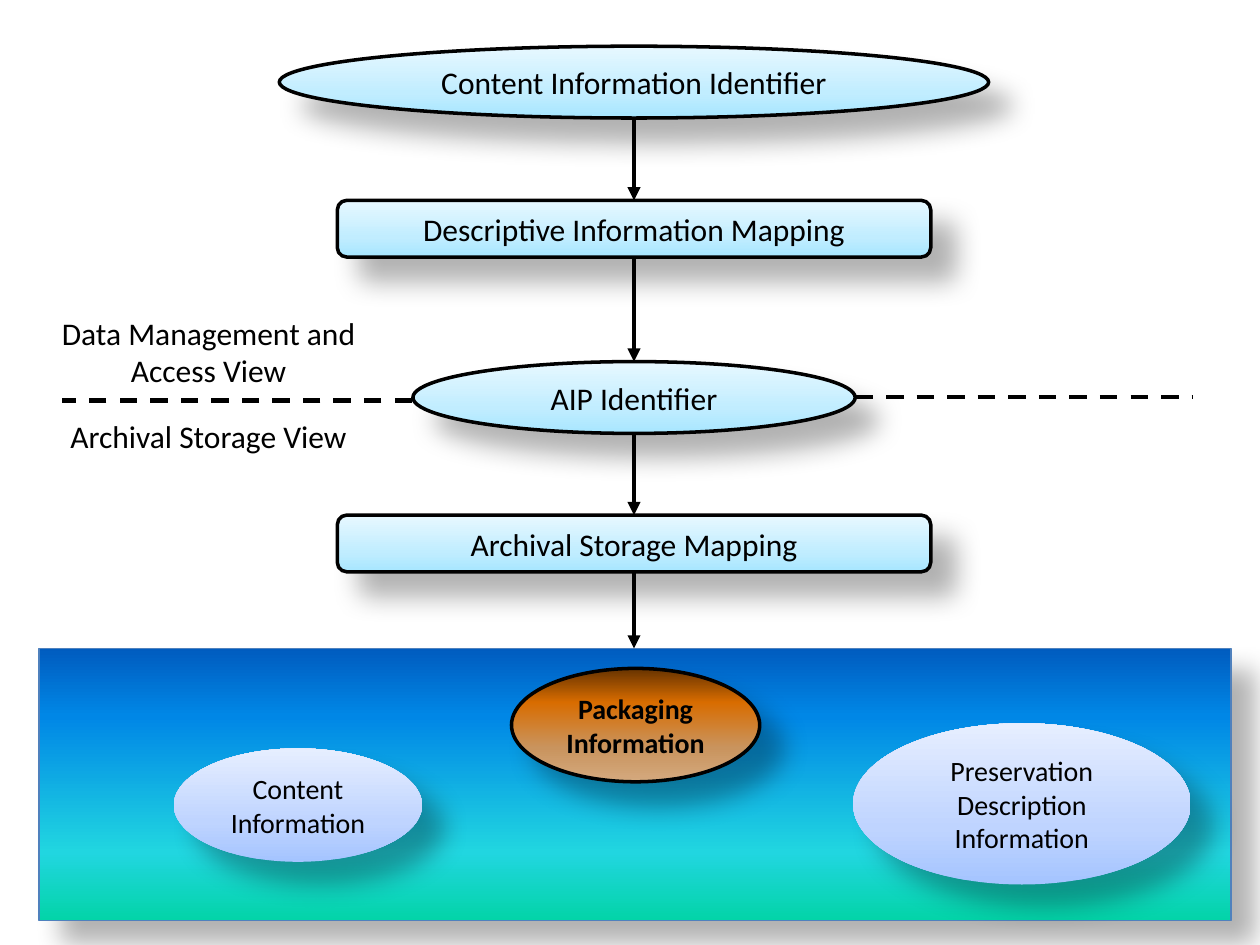
from itertools import pairwise

from lxml.etree import SubElement
from pptx import Presentation
from pptx.dml.color import RGBColor
from pptx.enum.dml import MSO_LINE
from pptx.enum.shapes import MSO_CONNECTOR, MSO_SHAPE
from pptx.enum.text import MSO_ANCHOR, PP_ALIGN
from pptx.oxml.ns import qn
from pptx.util import Inches, Pt

# Grid of 100 columns by 75 rows
COLS, ROWS = 100, 75
CELL = Inches(0.1)
AXIS = 50.32  # column on which the flow is centred

# Gradients: (position in percent, colour), from bottom to top
ICE = [(0, "A7E6FF"), (35, "C1EDFF"), (100, "E7F8FF")]
OCEAN = [(0, "03D4A8"), (25, "21D6E0"), (75, "0087E6"), (100, "005CBF")]
COPPER = [(0, "D4A97E"), (30, "C9945E"), (70, "D86C00"), (100, "663300")]
LILAC = [(0, "A4C4FF"), (35, "BFD4FF"), (100, "E6EEFF")]

# Flow steps: text, shape, top, width, height
FLOW = [
    ("Content Information Identifier", MSO_SHAPE.OVAL, 3.67, 56.3, 5.7),
    ("Descriptive Information Mapping", MSO_SHAPE.ROUNDED_RECTANGLE, 15.9, 47.1, 4.5),
    ("AIP Identifier", MSO_SHAPE.OVAL, 28.7, 35.1, 5.7),
    ("Archival Storage Mapping", MSO_SHAPE.ROUNDED_RECTANGLE, 40.88, 47.1, 4.5),
]
PANEL = (3.1, 51.46, 94.6, 21.6)

# Package parts: paragraphs, box, gradient, outline width, bold
PARTS = [
    (["Packaging Information"], (40.6, 53.05, 19.7, 9), COPPER, 2, True),
    (["Preservation Description", "Information"], (67.7, 57.4, 26.8, 12.8), LILAC, 0, False),
    (["Content Information"], (13.8, 59.4, 19.7, 9), LILAC, 0, False),
]

# View names beside the dashed divider: text, top, height
VIEWS = [
    ("Data Management and Access View", 24.4, 7.1),
    ("Archival Storage View", 32.6, 4),
]


def rgb(value):
    return RGBColor.from_string(value)


def cells(*values):
    return [round(v * CELL) for v in values]


def set_attrs(obj, values):
    for name, value in values.items():
        setattr(obj, name, value)


def write(s, paragraphs, size=18, bold=False, anchor=MSO_ANCHOR.MIDDLE):
    tf = s.text_frame
    set_attrs(tf, {"word_wrap": True, "vertical_anchor": anchor})
    for i, text in enumerate(paragraphs):
        p = tf.add_paragraph() if i else tf.paragraphs[0]
        p.alignment = PP_ALIGN.CENTER
        r = p.add_run()
        r.text = text
        set_attrs(r.font, {"name": "Calibri", "size": Pt(size), "bold": bold})
        r.font.color.rgb = rgb("000000")


def set_gradient(s, stops):
    s.fill.gradient()
    s.fill.gradient_angle = 90
    stop_list = s._element.spPr.find(qn("a:gradFill")).find(qn("a:gsLst"))
    for old in list(stop_list):
        stop_list.remove(old)
    for position, color in stops:
        stop = SubElement(stop_list, qn("a:gs"), pos=str(position * 1000))
        SubElement(stop, qn("a:srgbClr"), val=color)


def set_shadow(s):
    s.shadow.inherit = False
    effects = s._element.spPr.find(qn("a:effectLst"))
    shadow = SubElement(effects, qn("a:outerShdw"), blurRad=str(Pt(15)),
                        dist=str(Pt(18)), dir=str(45 * 60000), rotWithShape="0")
    color = SubElement(shadow, qn("a:srgbClr"), val="000000")
    SubElement(color, qn("a:alpha"), val="30000")


def add_block(slide, kind, box, stops, width=2, color="000000"):
    s = slide.shapes.add_shape(kind, *cells(*box))
    set_gradient(s, stops)
    if width:
        s.line.color.rgb = rgb(color)
        s.line.width = Pt(width)
    else:
        s.line.fill.background()
    set_shadow(s)
    return s


def add_line(slide, start, end, dashed=False):
    s = slide.shapes.add_connector(MSO_CONNECTOR.STRAIGHT, *cells(*start, *end))
    s.line.color.rgb = rgb("000000")
    s.line.width = Pt(2.5)
    if dashed:
        s.line.dash_style = MSO_LINE.DASH
    else:
        SubElement(s.line._get_or_add_ln(), qn("a:tailEnd"), type="triangle")
    SubElement(s._element.spPr, qn("a:effectLst"))


def add_label(slide, text, top, height):
    s = slide.shapes.add_textbox(*cells(PANEL[0], top, 26.9, height))
    write(s, [text], anchor=MSO_ANCHOR.TOP)


def main():
    prs = Presentation()
    set_attrs(prs, {"slide_width": COLS * CELL, "slide_height": ROWS * CELL})
    slide = prs.slides.add_slide(prs.slide_layouts[6])

    # Package panel and the steps that lead to it
    add_block(slide, MSO_SHAPE.RECTANGLE, PANEL, OCEAN, 0.75, "4F81BD")
    for text, kind, top, width, height in FLOW:
        s = add_block(slide, kind, (AXIS - width / 2, top, width, height), ICE)
        write(s, [text])

    # Arrows from each step to the next one, and to the panel
    spans = [(top, top + height) for _, _, top, _, height in FLOW]
    for (_, bottom), (top, _) in pairwise(spans + [(PANEL[1], None)]):
        add_line(slide, (AXIS, bottom), (AXIS, top))

    # Divider between the two views
    add_line(slide, (67.9, 31.5), (94.7, 31.5), dashed=True)
    add_line(slide, (32.7, 31.8), (4.9, 31.8), dashed=True)
    for view in VIEWS:
        add_label(slide, *view)

    # Parts of the package
    for paragraphs, box, stops, width, bold in PARTS:
        s = add_block(slide, MSO_SHAPE.OVAL, box, stops, width)
        write(s, paragraphs, 16, bold)

    prs.save("out.pptx")


if __name__ == "__main__":
    main()
